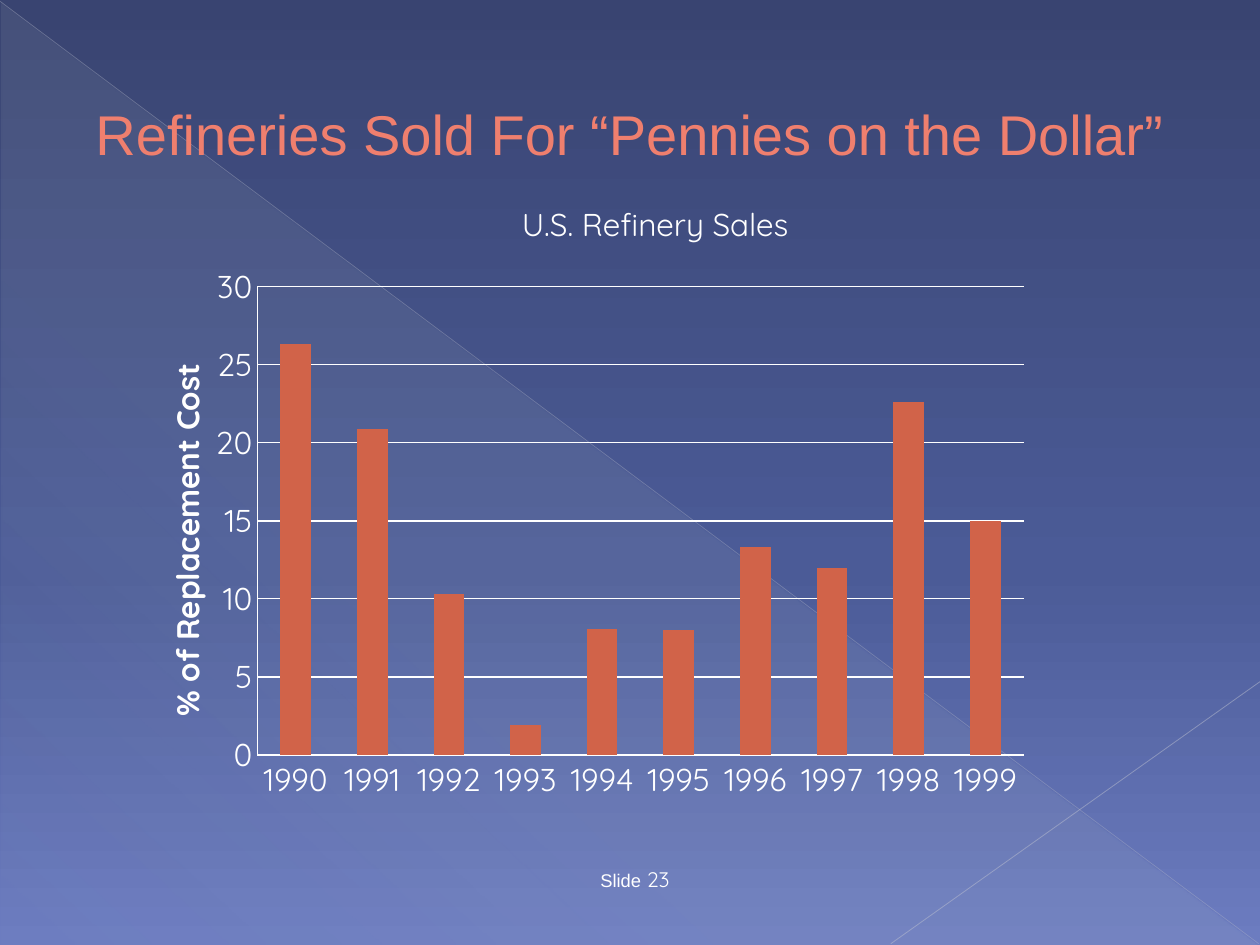
from dataclasses import dataclass

from lxml import etree
from pptx import Presentation
from pptx.chart.data import CategoryChartData
from pptx.dml.color import RGBColor
from pptx.enum import chart as charts, shapes, text
from pptx.oxml import parse_xml
from pptx.oxml.ns import nsdecls, qn
from pptx.util import Inches, Pt


@dataclass(frozen=True)
class Theme:
    heading_font: str = "Arial"
    body_font: str = "Quicksand"
    white: str = "FFFFFF"
    title: str = "EF7F6E"
    title_outline: str = "914533"
    bar: str = "D16349"
    background: tuple = ((0, "394471", 100), (60, "4B5B97", 100), (100, "6C7CC0", 100))
    glow: tuple = ((0, "C5D1D7", 10), (70, "C5D1D7", 8), (100, "C5D1D7", 1))
    title_size: float = 32
    body_size: float = 18
    number_size: float = 12
    footer_size: float = 10.5


def add_alpha(color_element, percent):
    etree.SubElement(color_element, qn("a:alpha")).set("val", str(percent * 1000))


def make_gradient(properties, stops, angle):
    """Replace the solid fill with stops of (position, colour, opacity), in percent."""
    gradient = parse_xml(
        f'<a:gradFill {nsdecls("a")} rotWithShape="1"><a:gsLst/>'
        f'<a:lin ang="{angle * 60000}" scaled="0"/></a:gradFill>')
    for position, color, opacity in stops:
        stop = etree.SubElement(gradient[0], qn("a:gs"), pos=str(position * 1000))
        add_alpha(etree.SubElement(stop, qn("a:srgbClr"), val=color), opacity)
    properties.replace(properties.find(qn("a:solidFill")), gradient)


def place_in_chart(parent, position, **values):
    """Give a chart part a manual layout in fractions of the chart."""
    for old in parent.findall(qn("c:layout")):
        parent.remove(old)
    layout = parse_xml(f'<c:layout {nsdecls("c")}><c:manualLayout/></c:layout>')
    for name, value in values.items():
        etree.SubElement(layout[0], qn(f"c:{name}"), val=str(value))
    parent.insert(position, layout)


class SlideBuilder:
    def __init__(self, slide, theme):
        self.slide = slide
        self.theme = theme

    def style_font(self, font, size, name=None, color=None):
        font.size = Pt(size)
        font.name = name or self.theme.body_font
        font.color.rgb = RGBColor.from_string(color or self.theme.white)

    def background(self):
        self.slide.background.fill.solid()
        properties = self.slide.element.find(f".//{qn('p:bgPr')}")
        make_gradient(properties, self.theme.background, 90)

    def triangle(self, left, top, width, height):
        shape = self.slide.shapes.add_shape(
            shapes.MSO_SHAPE.RIGHT_TRIANGLE,
            Inches(left), Inches(top), Inches(width), Inches(height))
        shape.shadow.inherit = False
        shape.line.fill.background()
        shape.fill.solid()
        make_gradient(shape.element.spPr, self.theme.glow, 133)

    def line(self, start, end, color, width, opacity):
        connector = self.slide.shapes.add_connector(
            shapes.MSO_CONNECTOR.STRAIGHT, *map(Inches, start + end))
        connector.line.width = Pt(width)
        connector.line.color.rgb = RGBColor.from_string(color)
        properties = connector.element.spPr
        add_alpha(properties.find(f".//{qn('a:srgbClr')}"), opacity)
        etree.SubElement(properties, qn("a:effectLst"))

    def text(self, left, top, width, height, anchor, *runs):
        """Add one centred paragraph; each run is (words, size, font, colour)."""
        box = self.slide.shapes.add_textbox(
            Inches(left), Inches(top), Inches(width), Inches(height))
        frame = box.text_frame
        frame.word_wrap = True
        frame.vertical_anchor = anchor
        paragraph = frame.paragraphs[0]
        paragraph.alignment = text.PP_ALIGN.CENTER
        for words, *style in runs:
            run = paragraph.add_run()
            run.text = words
            self.style_font(run.font, *style)
        return paragraph

    def outline_text(self, paragraph, color, width):
        for run in paragraph.runs:
            run.font._element.insert(0, parse_xml(
                f'<a:ln {nsdecls("a")} w="{Pt(width)}"><a:solidFill>'
                f'<a:srgbClr val="{color}"/></a:solidFill></a:ln>'))

    def column_chart(self, left, top, width, height, categories, values, axis_title):
        data = CategoryChartData()
        data.categories = categories
        data.add_series("Series 1", values)
        chart = self.slide.shapes.add_chart(
            charts.XL_CHART_TYPE.COLUMN_CLUSTERED,
            Inches(left), Inches(top), Inches(width), Inches(height), data).chart
        chart.has_legend = False
        chart.has_title = False
        self.style_font(chart.font, self.theme.body_size)

        plot = chart.plots[0]
        plot.gap_width = 150
        plot.vary_by_categories = False
        fill = plot.series[0].format.fill
        fill.solid()
        fill.fore_color.rgb = RGBColor.from_string(self.theme.bar)

        value_axis = chart.value_axis
        value_axis.minimum_scale, value_axis.maximum_scale = 0, 30
        value_axis.major_unit = 5
        value_axis.has_major_gridlines = True
        value_axis.tick_labels.number_format = "#,##0"
        value_axis.tick_labels.number_format_is_linked = False
        for axis in (chart.category_axis, value_axis):
            axis.major_tick_mark = charts.XL_TICK_MARK.NONE
        for lined in (chart.category_axis, value_axis, value_axis.major_gridlines):
            lined.format.line.width = Pt(0.75)
            lined.format.line.color.rgb = RGBColor.from_string(self.theme.white)

        title = value_axis.axis_title
        title.text_frame.text = axis_title
        title.text_frame._txBody.bodyPr.set("rot", "-5400000")
        title.text_frame._txBody.bodyPr.set("vert", "horz")
        font = title.text_frame.paragraphs[0].runs[0].font
        self.style_font(font, self.theme.body_size)
        font.bold = True

        place_in_chart(title._element, 1, xMode="edge", yMode="edge", x=0.03, y=0.17)
        place_in_chart(chart._chartSpace.chart.plotArea, 0, layoutTarget="inner",
                       xMode="edge", yMode="edge", x=0.138, y=0.047, w=0.838, h=0.808)


def main():
    presentation = Presentation()
    presentation.slide_width = Inches(10)
    presentation.slide_height = Inches(7.5)
    theme = Theme()
    builder = SlideBuilder(
        presentation.slides.add_slide(presentation.slide_layouts[6]), theme)

    builder.background()
    builder.triangle(0.01, 0.02, 9.98, 7.48)
    builder.line((0, 0.01), (9.99, 7.49), "BABECD", 0.39, 35)
    builder.line((10, 5.41), (7.07, 7.49), "C2C5D2", 0.47, 45)

    title = builder.text(
        0, 0.29, 10, 1.53, text.MSO_ANCHOR.MIDDLE,
        ("Refineries Sold For “Pennies on the Dollar”",
         theme.title_size, theme.heading_font, theme.title))
    builder.outline_text(title, theme.title_outline, 0.5)
    builder.text(4, 6.8, 2.08, 0.33, text.MSO_ANCHOR.BOTTOM,
                 ("Slide", theme.footer_size, theme.heading_font),
                 (" 23", theme.number_size))
    builder.column_chart(
        1.04, 2.06, 7.26, 4.6,
        [str(year) for year in range(1990, 2000)],
        [26.3, 20.9, 10.3, 1.9, 8.1, 8, 13.3, 12, 22.6, 15],
        "% of Replacement Cost")
    builder.text(3.75, 1.58, 2.9, 0.4, text.MSO_ANCHOR.TOP,
                 ("U.S. Refinery Sales", theme.body_size))

    presentation.save("out.pptx")


if __name__ == "__main__":
    main()
